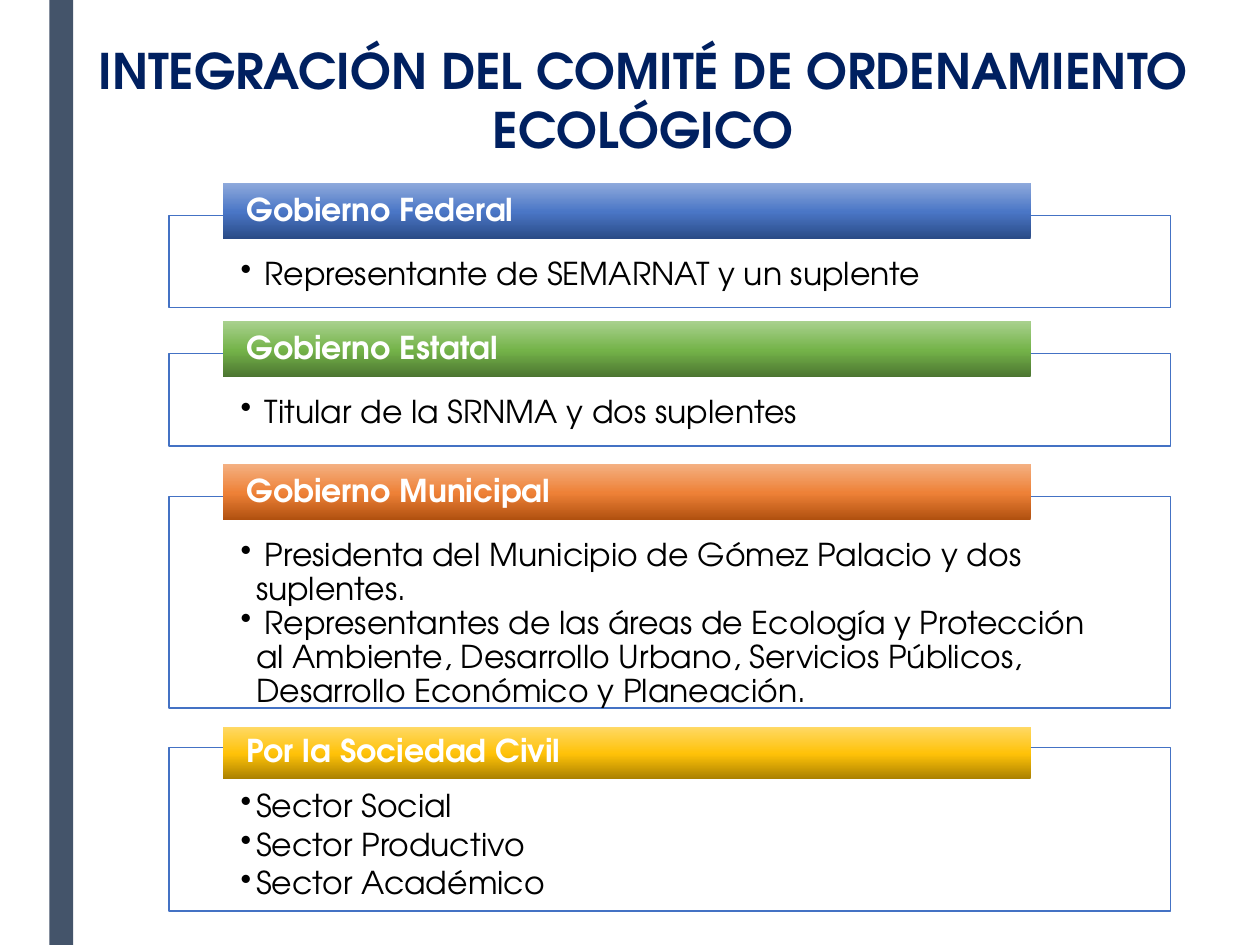
from copy import deepcopy
from dataclasses import dataclass

from lxml import etree
from pptx import Presentation
from pptx.dml.color import RGBColor
from pptx.enum.shapes import MSO_SHAPE
from pptx.enum.text import MSO_ANCHOR, MSO_AUTO_SIZE, PP_ALIGN
from pptx.oxml.ns import qn
from pptx.util import Pt

RECTANGLE = MSO_SHAPE.RECTANGLE
TOP, MIDDLE = MSO_ANCHOR.TOP, MSO_ANCHOR.MIDDLE
LEFT, CENTER = PP_ALIGN.LEFT, PP_ALIGN.CENTER
TITLE_ONLY = 5


@dataclass(frozen=True)
class Theme:
    font: str = "TeX Gyre Adventor"
    title_size: float = 28
    text_size: float = 18
    title: str = "002060"
    text: str = "000000"
    heading: str = "FFFFFF"
    side_band: str = "44546A"
    outline: str = "4472C4"
    blue: tuple[str, ...] = ("2A4B86", "4A76C6", "8FAADC")
    green: tuple[str, ...] = ("4B7430", "74B349", "A9D18E")
    orange: tuple[str, ...] = ("B0500F", "EE8137", "F4B183")
    yellow: tuple[str, ...] = ("AB8100", "FFC208", "FFD966")


@dataclass(frozen=True)
class Section:
    heading: str
    members: tuple[str, ...]
    gradient: tuple[str, ...]
    bar_top: float
    box_top: float
    box_height: float
    bar_height: float = 32.2
    space_before: float = 0


THEME = Theme()
GRADIENT_POSITIONS = (0, 0.48, 1)
BULLET_INDENT = 8.9
BOX_LEFT, BOX_WIDTH = 96.5, 572.4
BAR_LEFT, BAR_WIDTH = 127.4, 461.6
SECTIONS = (
    Section("Gobierno Federal", (" Representante de SEMARNAT y un suplente",),
            THEME.blue, 104.4, 123, 52.8),
    Section("Gobierno Estatal", (" Titular de la SRNMA y dos suplentes",),
            THEME.green, 183.5, 202, 52.8),
    Section("Gobierno Municipal",
            (" Presidenta del Municipio de Gómez Palacio y dos suplentes.",
             " Representantes de las áreas de Ecología y Protección al Ambiente, "
             "Desarrollo Urbano, Servicios Públicos, Desarrollo Económico y Planeación."),
            THEME.orange, 265, 283.6, 121),
    Section("Por la Sociedad Civil",
            ("Sector Social", "Sector Productivo", "Sector Académico"),
            THEME.yellow, 415.2, 427, 93.6, bar_height=30, space_before=2.7),
)


def apply_format(target, values: dict) -> None:
    for name, value in values.items():
        setattr(target, name, value)


def add_rectangle(slide, left: float, top: float, width: float, height: float):
    shape = slide.shapes.add_shape(RECTANGLE, Pt(left), Pt(top), Pt(width), Pt(height))
    shape.shadow.inherit = False
    shape.line.fill.background()
    return shape


def set_frame(shape, anchor, left: float, top: float, right: float, bottom: float):
    frame = shape.text_frame
    apply_format(frame, {
        "word_wrap": True, "auto_size": MSO_AUTO_SIZE.NONE, "vertical_anchor": anchor,
        "margin_left": Pt(left), "margin_top": Pt(top),
        "margin_right": Pt(right), "margin_bottom": Pt(bottom),
    })
    return frame


def write_text(paragraph, text: str, size: float, color: str, bold: bool,
               **paragraph_format) -> None:
    apply_format(paragraph, paragraph_format)
    run = paragraph.add_run()
    run.text = text
    apply_format(run.font, {"name": THEME.font, "size": Pt(size), "bold": bold})
    run.font.color.rgb = RGBColor.from_string(color)


def add_bullet(paragraph) -> None:
    properties = paragraph._p.get_or_add_pPr()
    properties.set("marL", str(Pt(BULLET_INDENT)))
    properties.set("indent", str(-Pt(BULLET_INDENT)))
    bullet_color = etree.SubElement(properties, qn("a:buClr"))
    etree.SubElement(bullet_color, qn("a:srgbClr")).set("val", THEME.text)
    etree.SubElement(properties, qn("a:buChar")).set("char", "•")


def fill_gradient(shape, colors: tuple[str, ...]) -> None:
    """Fill from bottom to top with one stop per color."""
    shape.fill.gradient()
    shape.fill.gradient_angle = 90
    stop_list = shape._element.spPr.find(f".//{qn('a:gsLst')}")
    stop_list.append(deepcopy(stop_list[0]))
    for stop, position, color in zip(shape.fill.gradient_stops, GRADIENT_POSITIONS, colors):
        stop.position = position
        stop.color.rgb = RGBColor.from_string(color)


def add_section(slide, section: Section) -> None:
    # Outlined box with the members
    box = add_rectangle(slide, BOX_LEFT, section.box_top, BOX_WIDTH, section.box_height)
    box.fill.background()
    box.line.color.rgb = RGBColor.from_string(THEME.outline)
    box.line.width = Pt(0.75)
    frame = set_frame(box, TOP, 41, 24.5, 41, 8.6)
    for index, member in enumerate(section.members):
        paragraph = frame.add_paragraph() if index else frame.paragraphs[0]
        write_text(paragraph, member, THEME.text_size, THEME.text, False,
                   level=1, alignment=LEFT, line_spacing=0.9,
                   space_before=Pt(section.space_before if index else 0))
        add_bullet(paragraph)

    # Heading bar over the top edge of the box
    bar = add_rectangle(slide, BAR_LEFT, section.bar_top, BAR_WIDTH, section.bar_height)
    fill_gradient(bar, section.gradient)
    frame = set_frame(bar, MIDDLE, 13.7, 0, 13.7, 0)
    write_text(frame.paragraphs[0], section.heading, THEME.text_size, THEME.heading, True,
               alignment=LEFT, line_spacing=0.9)


def main() -> None:
    presentation = Presentation()
    presentation.slide_width, presentation.slide_height = Pt(720), Pt(540)
    slide = presentation.slides.add_slide(presentation.slide_layouts[TITLE_ONLY])

    # Side band
    band = add_rectangle(slide, 28.2, 0, 13.6, 540)
    band.fill.solid()
    band.fill.fore_color.rgb = RGBColor.from_string(THEME.side_band)

    # Title
    title = slide.shapes.title
    apply_format(title, {"left": Pt(47.5), "top": Pt(19.4),
                         "width": Pt(640), "height": Pt(75)})
    frame = set_frame(title, TOP, 7.2, 3.6, 7.2, 3.6)
    write_text(frame.paragraphs[0], "INTEGRACIÓN DEL COMITÉ DE ORDENAMIENTO ECOLÓGICO",
               THEME.title_size, THEME.title, True, alignment=CENTER)

    # Committee sections
    for section in SECTIONS:
        add_section(slide, section)

    presentation.save("out.pptx")


if __name__ == "__main__":
    main()
